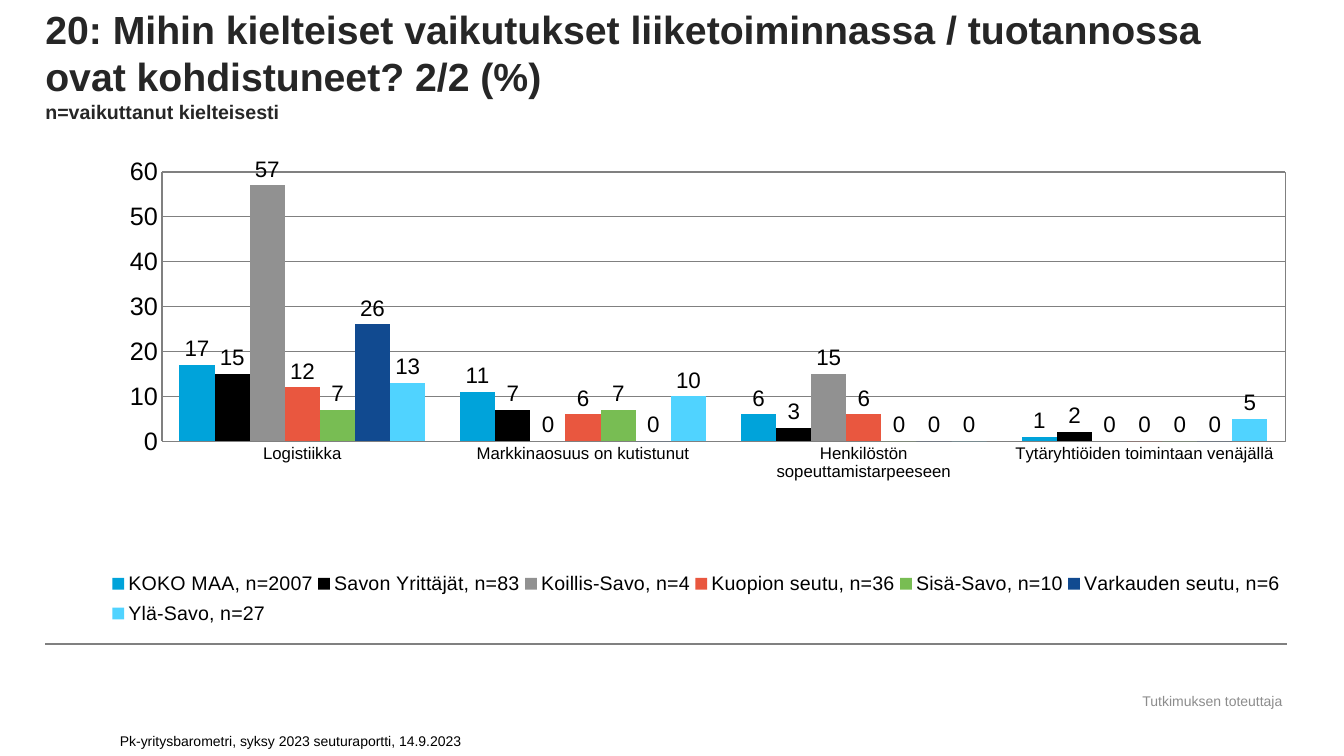
from dataclasses import dataclass

from lxml import etree
from pptx import Presentation
from pptx.chart.data import CategoryChartData
from pptx.dml.color import RGBColor
from pptx.enum.chart import (XL_CHART_TYPE, XL_LABEL_POSITION,
                             XL_LEGEND_POSITION, XL_TICK_MARK)
from pptx.enum.shapes import MSO_CONNECTOR
from pptx.enum.text import MSO_ANCHOR, PP_ALIGN
from pptx.oxml.ns import qn
from pptx.util import Emu, Pt

COLUMNS = XL_CHART_TYPE.COLUMN_CLUSTERED
OUTSIDE_END = XL_LABEL_POSITION.OUTSIDE_END
LEGEND_RIGHT = XL_LEGEND_POSITION.RIGHT
NO_TICK = XL_TICK_MARK.NONE
STRAIGHT = MSO_CONNECTOR.STRAIGHT
MIDDLE, BOTTOM = MSO_ANCHOR.MIDDLE, MSO_ANCHOR.BOTTOM
LEFT, CENTER = PP_ALIGN.LEFT, PP_ALIGN.CENTER

EMU_PER_PX = 9144  # 100 px to the inch
FONT = "Arial"
COLORS = {"title": "262626", "text": "000000", "credit": "8C8C8C", "line": "808080"}


@dataclass
class Caption:
    text: str
    box: tuple[int, int, int, int]
    size: int
    color: str
    anchor: MSO_ANCHOR
    align: PP_ALIGN = LEFT


@dataclass
class Area:
    name: str
    color: str
    values: tuple[int, ...]


CAPTIONS = [
    Caption("Tutkimuksen toteuttaja", (1116, 682, 173, 26), 10, "credit", MIDDLE, CENTER),
    Caption("Pk-yritysbarometri, syksy 2023 seuturaportti, 14.9.2023",
            (109, 713, 541, 35), 10, "text", BOTTOM),
]
CATEGORIES = ["Logistiikka", "Markkinaosuus on kutistunut",
              "Henkilöstön sopeuttamistarpeeseen", "Tytäryhtiöiden toimintaan venäjällä"]
AREAS = [
    Area("KOKO MAA, n=2007", "00A3DA", (17, 11, 6, 1)),
    Area("Savon Yrittäjät, n=83", "000000", (15, 7, 3, 2)),
    Area("Koillis-Savo, n=4", "919191", (57, 0, 15, 0)),
    Area("Kuopion seutu, n=36", "E9573F", (12, 6, 6, 0)),
    Area("Sisä-Savo, n=10", "78BD53", (7, 7, 0, 0)),
    Area("Varkauden seutu, n=6", "114A90", (26, 0, 0, 0)),
    Area("Ylä-Savo, n=27", "50D3FF", (13, 10, 0, 5)),
]


def px(*lengths: int) -> list[Emu]:
    return [Emu(length * EMU_PER_PX) for length in lengths]


def rgb(name: str) -> RGBColor:
    return RGBColor.from_string(COLORS[name])


def style_font(font, size: int, color: str) -> None:
    font.name, font.size = FONT, Pt(size)
    font.color.rgb = rgb(color)


def add_caption(s, caption: Caption) -> None:
    tf = s.shapes.add_textbox(*px(*caption.box)).text_frame
    tf.word_wrap = True
    tf.vertical_anchor = caption.anchor
    p = tf.paragraphs[0]
    p.text, p.alignment = caption.text, caption.align
    style_font(p.font, caption.size, caption.color)


def add_title(s, title: str, base: str) -> None:
    tf = s.shapes.add_textbox(*px(45, 0, 1230, 122)).text_frame
    tf.word_wrap = True
    tf.vertical_anchor = BOTTOM
    tf.margin_left = tf.margin_top = tf.margin_right = tf.margin_bottom = 0
    p = tf.paragraphs[0]
    p.font.bold = True
    for text, size in ((title, 28), (base, 14)):
        if p.runs:
            p.add_line_break()
        r = p.add_run()
        r.text = text
        r.font.bold = True
        style_font(r.font, size, "title")


def add_rule(s) -> None:
    rule = s.shapes.add_connector(STRAIGHT, *px(45, 639, 1276, 639))
    rule.line.color.rgb = rgb("line")
    rule.line.width = Pt(1.5)
    etree.SubElement(rule._element.spPr, qn("a:effectLst"))


def manual_layout(values: dict[str, str | float]):
    """Return a c:layout element holding the given settings in order."""
    layout = etree.Element(qn("c:layout"))
    manual = etree.SubElement(layout, qn("c:manualLayout"))
    for tag, value in values.items():
        etree.SubElement(manual, qn(f"c:{tag}")).set("val", str(value))
    return layout


def place_plot_and_legend(chart) -> None:
    edges = {"xMode": "edge", "yMode": "edge"}
    plot_area = chart._chartSpace.chart.plotArea
    for old in plot_area.findall(qn("c:layout")):
        plot_area.remove(old)
    plot_area.insert(0, manual_layout(
        {"layoutTarget": "inner", **edges, "x": 0.094, "y": 0.033, "w": 0.906, "h": 0.566}))
    border = etree.SubElement(plot_area, qn("c:spPr"))
    etree.SubElement(border, qn("a:noFill"))
    line = etree.SubElement(border, qn("a:ln"), w="6350")
    fill = etree.SubElement(line, qn("a:solidFill"))
    etree.SubElement(fill, qn("a:srgbClr"), val=COLORS["line"])

    legend = chart.legend._element
    for old in legend.findall(qn("c:layout")):
        legend.remove(old)
    legend.find(qn("c:legendPos")).addnext(manual_layout(
        {**edges, "x": 0.05, "y": 0.86, "w": 0.95, "h": 0.14}))


def add_area_chart(s) -> None:
    data = CategoryChartData(number_format="General")
    data.categories = CATEGORIES
    for area in AREAS:
        data.add_series(area.name, area.values)
    chart = s.shapes.add_chart(COLUMNS, *px(45, 155, 1230, 472), data).chart
    style_font(chart.font, 18, "text")
    chart.has_title = False

    for axis, size in ((chart.category_axis, 12), (chart.value_axis, 18)):
        axis.major_tick_mark = axis.minor_tick_mark = NO_TICK
        axis.format.line.color.rgb = rgb("line")
        style_font(axis.tick_labels.font, size, "text")
    scale = chart.value_axis
    scale.minimum_scale, scale.maximum_scale, scale.major_unit = 0, 60, 10
    scale.major_gridlines.format.line.color.rgb = rgb("line")

    plot = chart.plots[0]
    plot.gap_width, plot.overlap = 100, 0
    plot.vary_by_categories = False
    for series, area in zip(plot.series, AREAS):
        series.format.fill.solid()
        series.format.fill.fore_color.rgb = RGBColor.from_string(area.color)
        labels = series.data_labels
        labels.show_value = True
        labels.position = OUTSIDE_END
        labels.number_format, labels.number_format_is_linked = "#,##0", False
        style_font(labels.font, 16, "text")

    chart.has_legend = True
    chart.legend.position = LEGEND_RIGHT
    chart.legend.include_in_layout = False
    style_font(chart.legend.font, 14, "text")
    place_plot_and_legend(chart)


def main() -> None:
    prs = Presentation()
    prs.slide_width, prs.slide_height = px(1333, 750)
    s = prs.slides.add_slide(prs.slide_layouts[6])
    add_rule(s)
    add_title(s, "20: Mihin kielteiset vaikutukset liiketoiminnassa / tuotannossa "
                 "ovat kohdistuneet? 2/2 (%)", "n=vaikuttanut kielteisesti")
    for caption in CAPTIONS:
        add_caption(s, caption)
    add_area_chart(s)
    prs.save("out.pptx")


if __name__ == "__main__":
    main()
